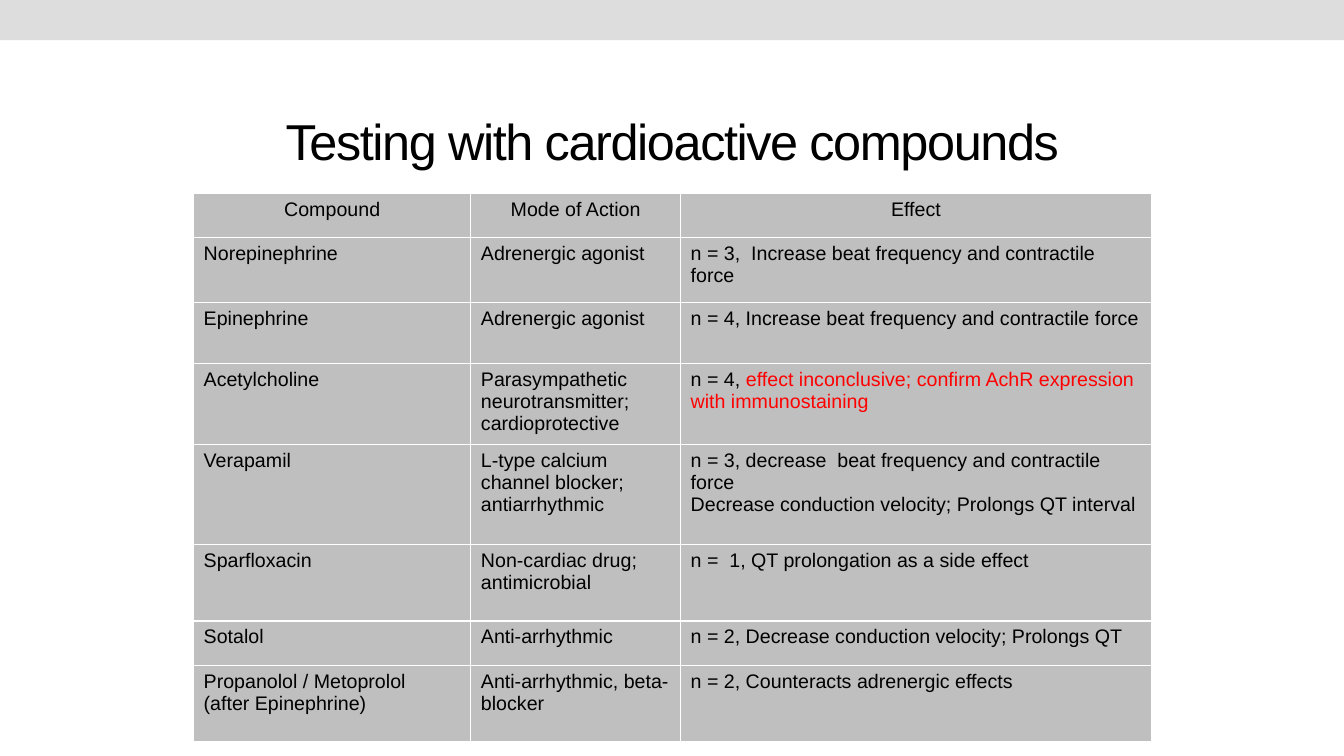
import pptx
import pptx.util
import pptx.dml.color
import pptx.enum.shapes
import pptx.enum.text
import pptx.oxml
import pptx.oxml.ns

RGB = pptx.dml.color.RGBColor
ALIGN = pptx.enum.text.PP_ALIGN
BLACK = RGB(0x00, 0x00, 0x00)
RED = RGB(0xFF, 0x00, 0x00)
BAND = RGB(0xDD, 0xDD, 0xDD)
GREY = RGB(0xBF, 0xBF, 0xBF)
FONT = "Arial"
SCALE = 9144

WIDTHS = [275, 208, 467]
HEIGHTS = [44, 64, 61, 76, 99, 76, 44, 76]
ROWS = [
    ["Compound", "Mode of Action", "Effect"],
    ["Norepinephrine", "Adrenergic agonist",
     "n = 3,  Increase beat frequency and contractile force"],
    ["Epinephrine", "Adrenergic agonist",
     "n = 4, Increase beat frequency and contractile force"],
    ["Acetylcholine", "Parasympathetic neurotransmitter; cardioprotective",
     "n = 4, "],
    ["Verapamil", "L-type calcium channel blocker; antiarrhythmic",
     "n = 3, decrease  beat frequency and contractile force\n"
     "Decrease conduction velocity; Prolongs QT interval"],
    ["Sparfloxacin", "Non-cardiac drug; antimicrobial",
     "n =  1, QT prolongation as a side effect"],
    ["Sotalol", "Anti-arrhythmic",
     "n = 2, Decrease conduction velocity; Prolongs QT"],
    ["Propanolol / Metoprolol\n(after Epinephrine)",
     "Anti-arrhythmic, beta-blocker",
     "n = 2, Counteracts adrenergic effects"],
]
DOUBT = "effect inconclusive; confirm AchR expression with immunostaining"


def px(*nums):
    return [pptx.util.Emu(num * SCALE) for num in nums]


def style(para, size, align):
    para.alignment = align
    para.font.name = FONT
    para.font.size = pptx.util.Pt(size)
    para.font.color.rgb = BLACK


def add_band(slide):
    band = slide.shapes.add_shape(
        pptx.enum.shapes.MSO_SHAPE.RECTANGLE, *px(0, 0, 1333, 40))
    band.shadow.inherit = False
    band.fill.solid()
    band.fill.fore_color.rgb = BAND
    band.line.fill.background()


def add_title(slide, text):
    frame = slide.shapes.add_textbox(*px(217, 92, 900, 95)).text_frame
    frame.word_wrap = True
    frame.vertical_anchor = pptx.enum.text.MSO_ANCHOR.MIDDLE
    para = frame.paragraphs[0]
    run = para.add_run()
    run.text = text
    style(para, 36, ALIGN.CENTER)
    run.font._element.set("spc", "-100")


def edge(cell):
    props = cell._tc.get_or_add_tcPr()
    space = pptx.oxml.ns.nsdecls("a")
    for spot, side in enumerate("LRTB"):
        props.insert(spot, pptx.oxml.parse_xml(
            f'<a:ln{side} {space} w="12700"><a:solidFill>'
            f'<a:srgbClr val="FFFFFF"/></a:solidFill></a:ln{side}>'))


def fill_cell(cell, text, align):
    cell.text = text
    cell.fill.solid()
    cell.fill.fore_color.rgb = GREY
    edge(cell)
    for para in cell.text_frame.paragraphs:
        style(para, 14, align)


def add_grid(slide):
    grid = slide.shapes.add_table(
        len(ROWS), len(WIDTHS),
        *px(192, 192, sum(WIDTHS), sum(HEIGHTS))).table
    for col, width in zip(grid.columns, px(*WIDTHS)):
        col.width = width
    for row, height in zip(grid.rows, px(*HEIGHTS)):
        row.height = height
    for r, texts in enumerate(ROWS):
        align = ALIGN.LEFT if r else ALIGN.CENTER
        for c, text in enumerate(texts):
            fill_cell(grid.cell(r, c), text, align)
    return grid


def add_doubt(cell):
    run = cell.text_frame.paragraphs[0].add_run()
    run.text = DOUBT
    run.font.color.rgb = RED


def main():
    deck = pptx.Presentation()
    deck.slide_width, deck.slide_height = px(1333, 750)
    slide = deck.slides.add_slide(deck.slide_layouts[6])
    add_band(slide)
    add_title(slide, "Testing with cardioactive compounds")
    grid = add_grid(slide)
    add_doubt(grid.cell(3, 2))
    deck.save("out.pptx")


if __name__ == "__main__":
    main()
